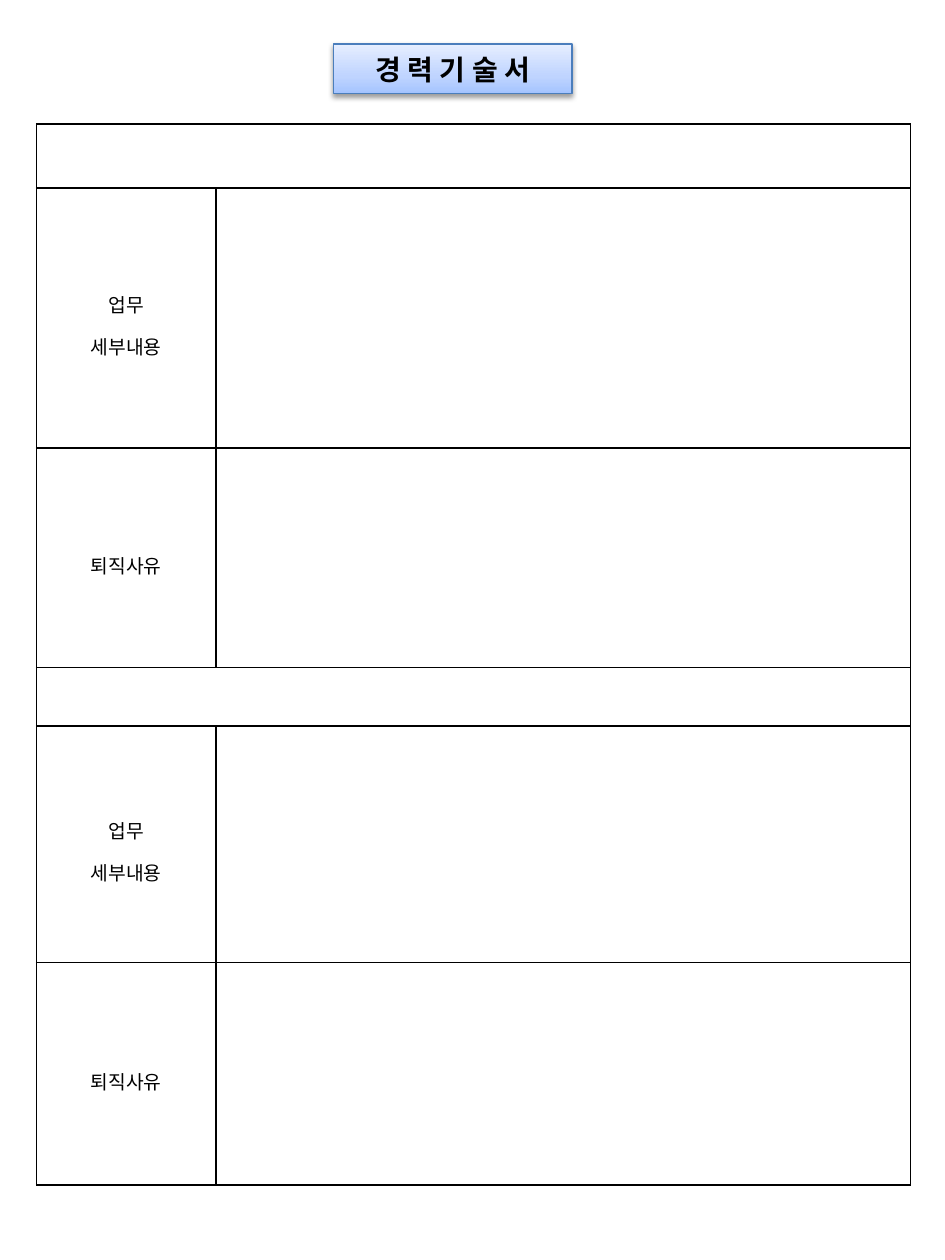
from dataclasses import dataclass

from lxml.etree import SubElement
from pptx import Presentation
from pptx.dml.color import RGBColor
from pptx.enum.shapes import MSO_SHAPE
from pptx.enum.text import MSO_ANCHOR, PP_ALIGN
from pptx.oxml import parse_xml
from pptx.oxml.ns import nsdecls, qn
from pptx.util import Cm, Pt


@dataclass(frozen=True)
class Theme:
    font: str = "Noto Sans CJK KR"
    ink: str = "000000"
    paper: str = "FFFFFF"
    title_line: str = "4B7EBC"
    title_stops: tuple = ((0, "A4C4FF"), (35, "BFD4FF"), (100, "E6EEFF"))
    title_size: int = 16
    label_size: int = 11
    border: float = 1


@dataclass(frozen=True)
class Row:
    height: float
    label: str = ""


THEME = Theme()
COLUMNS = (3.61, 14.0)
ROWS = (
    Row(1.29),
    Row(5.24, "업무\n세부내용"),
    Row(4.43, "퇴직사유"),
    Row(1.18),
    Row(4.76, "업무\n세부내용"),
    Row(4.49, "퇴직사유"),
)


def write(tf, text: str, *, size: int, bold: bool = False, spacing: float = 1.0) -> None:
    for i, line in enumerate(text.split("\n")):
        p = tf.paragraphs[0] if i == 0 else tf.add_paragraph()
        p.alignment = PP_ALIGN.CENTER
        p.line_spacing = spacing
        r = p.add_run()
        r.text = line
        r.font.name = THEME.font
        r.font.size = Pt(size)
        r.font.bold = bold
        r.font.color.rgb = RGBColor.from_string(THEME.ink)
        SubElement(r._r.get_or_add_rPr(), qn("a:ea"), typeface=THEME.font)


def add_title(s, text: str) -> None:
    sp = s.shapes.add_shape(MSO_SHAPE.RECTANGLE, Cm(6.73), Cm(0.89), Cm(4.8), Cm(1))
    sp.fill.gradient()
    sp.fill.gradient_angle = 90
    stops = sp._element.spPr.find(".//" + qn("a:gsLst"))
    stops.clear()
    for pos, color in THEME.title_stops:
        gs = SubElement(stops, qn("a:gs"), pos=str(pos * 1000))
        SubElement(gs, qn("a:srgbClr"), val=color)
    sp.line.color.rgb = RGBColor.from_string(THEME.title_line)
    sp.line.width = Pt(0.75)
    sp.shadow.inherit = False
    effects = sp._element.spPr.find(qn("a:effectLst"))
    effects.append(parse_xml(
        f'<a:outerShdw {nsdecls("a")} blurRad="{Pt(3.1)}" dist="{Pt(1.6)}" '
        f'dir="5400000" rotWithShape="0"><a:srgbClr val="{THEME.ink}">'
        '<a:alpha val="38000"/></a:srgbClr></a:outerShdw>'))
    tf = sp.text_frame
    tf.vertical_anchor = MSO_ANCHOR.MIDDLE
    write(tf, text, size=THEME.title_size, bold=True)


def style_cell(cell) -> None:
    cell.fill.solid()
    cell.fill.fore_color.rgb = RGBColor.from_string(THEME.paper)
    cell.vertical_anchor = MSO_ANCHOR.MIDDLE
    tc_pr = cell._tc.get_or_add_tcPr()
    for i, side in enumerate(("lnL", "lnR", "lnT", "lnB")):
        tc_pr.insert(i, parse_xml(
            f'<a:{side} {nsdecls("a")} w="{Pt(THEME.border)}"><a:solidFill>'
            f'<a:srgbClr val="{THEME.ink}"/></a:solidFill></a:{side}>'))


def add_career_table(s) -> None:
    height = sum(row.height for row in ROWS)
    table = s.shapes.add_table(len(ROWS), len(COLUMNS), Cm(0.74), Cm(2.5),
                               Cm(sum(COLUMNS)), Cm(height)).table
    table.first_row = False
    table.horz_banding = False
    for column, width in zip(table.columns, COLUMNS):
        column.width = Cm(width)
    for i, row in enumerate(ROWS):
        table.rows[i].height = Cm(row.height)
        for cell in table.rows[i].cells:
            style_cell(cell)
        if row.label:
            write(table.cell(i, 0).text_frame, row.label,
                  size=THEME.label_size, spacing=1.5)
        else:
            table.cell(i, 0).merge(table.cell(i, 1))


def main() -> None:
    prs = Presentation()
    prs.slide_width, prs.slide_height = Cm(19.05), Cm(25.4)
    s = prs.slides.add_slide(prs.slide_layouts[6])
    add_title(s, "경 력 기 술 서")
    add_career_table(s)
    prs.save("out.pptx")


if __name__ == "__main__":
    main()
